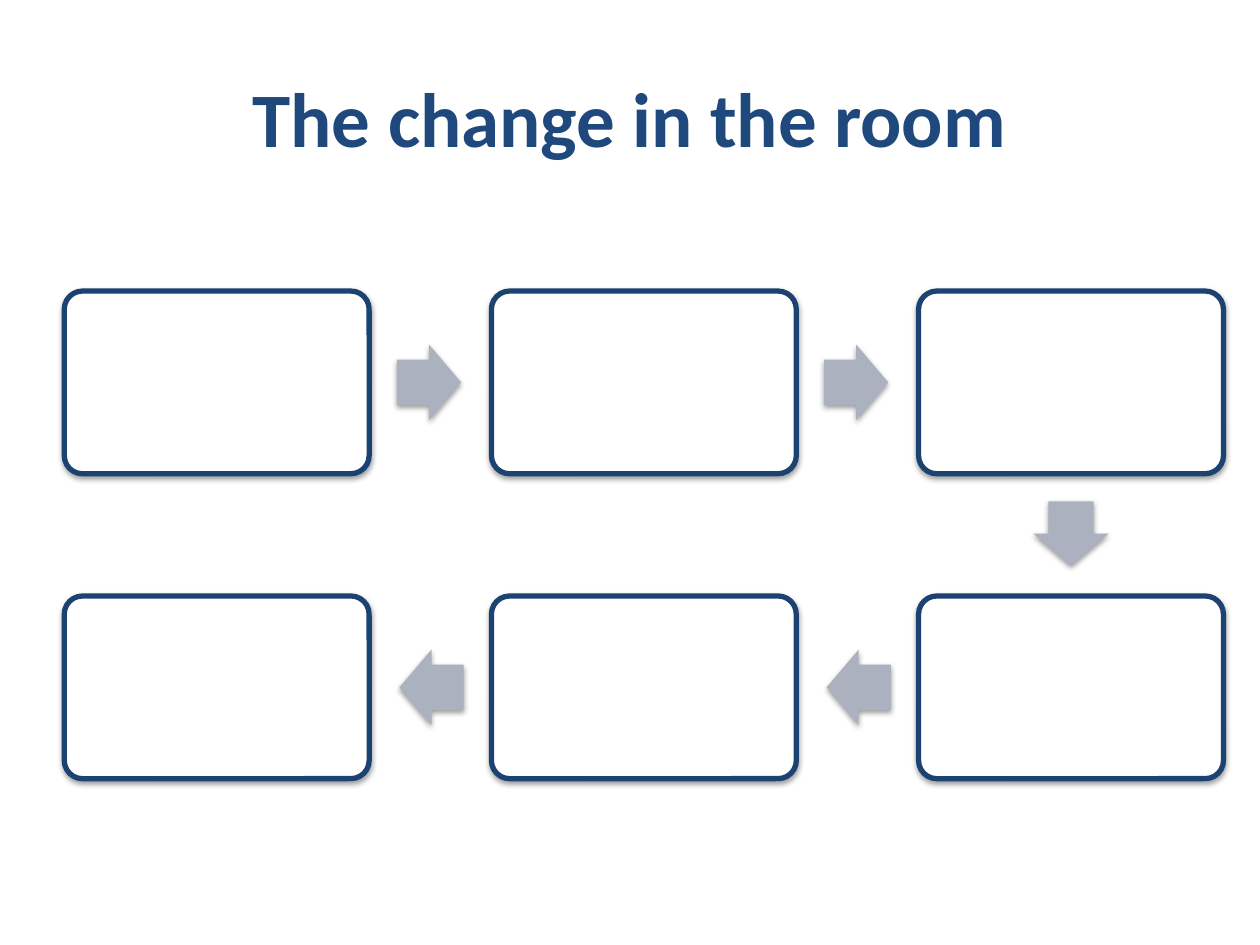
import math

import lxml.etree
import pptx
import pptx.dml.color
import pptx.enum.shapes
import pptx.enum.text
import pptx.oxml.ns
import pptx.util

SHAPES = pptx.enum.shapes.MSO_SHAPE
COLUMNS, ROWS = 3, 2
GRID_LEFT, GRID_TOP = 0.51, 2.31
COLUMN_PITCH, ROW_PITCH = 3.39, 2.42
BOX_WIDTH, BOX_HEIGHT = 2.42, 1.45
ARROW_LENGTH, ARROW_BREADTH = 0.51, 0.6
ARROW_SETBACK = 0.01  # arrows sit slightly nearer the box they leave


def color(hex_string):
    return pptx.dml.color.RGBColor.from_string(hex_string)


def write_text(shape, text, *, size, font, fill, bold=False):
    """Put one centred paragraph in the middle of a shape."""
    frame = shape.text_frame
    frame.word_wrap = True
    frame.vertical_anchor = pptx.enum.text.MSO_ANCHOR.MIDDLE
    paragraph = frame.paragraphs[0]
    paragraph.alignment = pptx.enum.text.PP_ALIGN.CENTER
    run = paragraph.add_run()
    run.text = text
    run.font.size = pptx.util.Pt(size)
    run.font.name = font
    run.font.bold = bold
    run.font.color.rgb = color(fill)


def add_shadow(shape):
    """Give a shape a soft black shadow straight below it."""
    shape.shadow.inherit = False
    qualify = pptx.oxml.ns.qn
    effects = shape._element.spPr.find(qualify("a:effectLst"))
    shadow = lxml.etree.SubElement(
        effects, qualify("a:outerShdw"), blurRad="40000", dist="20000",
        dir="5400000", rotWithShape="0")
    black = lxml.etree.SubElement(shadow, qualify("a:srgbClr"), val="000000")
    lxml.etree.SubElement(black, qualify("a:alpha"), val="38000")


class SlideBuilder:
    font = "Calibri"
    title_color = "1F497D"
    box_fill = "FFFFFF"
    box_line = "1C4271"
    arrow_fill = "ACB1BF"

    def __init__(self, presentation):
        self.width = presentation.slide_width
        self.height = presentation.slide_height
        self.slide = presentation.slides.add_slide(presentation.slide_layouts[6])

    def title(self, text, left, top, width, height):
        """Add the title; lengths are shares of the slide's size."""
        shape = self.slide.shapes.add_textbox(
            int(left * self.width), int(top * self.height),
            int(width * self.width), int(height * self.height))
        write_text(shape, text, size=44, font=self.font,
                   fill=self.title_color, bold=True)

    def centered_shape(self, kind, center, width, height, fill):
        x, y = center
        shape = self.slide.shapes.add_shape(
            kind, pptx.util.Inches(x - width / 2), pptx.util.Inches(y - height / 2),
            pptx.util.Inches(width), pptx.util.Inches(height))
        shape.fill.solid()
        shape.fill.fore_color.rgb = color(fill)
        add_shadow(shape)
        return shape

    def cell_center(self, cell):
        column, row = cell
        return (GRID_LEFT + column * COLUMN_PITCH + BOX_WIDTH / 2,
                GRID_TOP + row * ROW_PITCH + BOX_HEIGHT / 2)

    def box(self, cell):
        shape = self.centered_shape(SHAPES.ROUNDED_RECTANGLE, self.cell_center(cell),
                                    BOX_WIDTH, BOX_HEIGHT, self.box_fill)
        shape.adjustments[0] = 0.1
        shape.line.color.rgb = color(self.box_line)
        shape.line.width = pptx.util.Pt(3)

    def arrow(self, start, end):
        """Point from one grid cell to its neighbour."""
        start_x, start_y = self.cell_center(start)
        end_x, end_y = self.cell_center(end)
        step_x, step_y = end[0] - start[0], end[1] - start[1]
        center = ((start_x + end_x) / 2 - step_x * ARROW_SETBACK,
                  (start_y + end_y) / 2 - step_y * ARROW_SETBACK)
        shape = self.centered_shape(SHAPES.RIGHT_ARROW, center,
                                    ARROW_LENGTH, ARROW_BREADTH, self.arrow_fill)
        shape.adjustments[0] = 0.6
        shape.adjustments[1] = 0.5
        shape.rotation = math.degrees(math.atan2(step_y, step_x))
        shape.line.fill.background()


def main():
    presentation = pptx.Presentation()
    presentation.slide_width = pptx.util.Inches(10)
    presentation.slide_height = pptx.util.Inches(7.5)
    builder = SlideBuilder(presentation)

    # Title
    builder.title("The change in the room", 0.05, 0.04, 0.9, 1 / 6)

    # Boxes run rightwards on the first row and back on the second
    cells = [(column if row % 2 == 0 else COLUMNS - 1 - column, row)
             for row in range(ROWS) for column in range(COLUMNS)]
    builder.box(cells[0])
    for start, end in zip(cells, cells[1:]):
        builder.arrow(start, end)
        builder.box(end)

    presentation.save("out.pptx")


if __name__ == "__main__":
    main()
